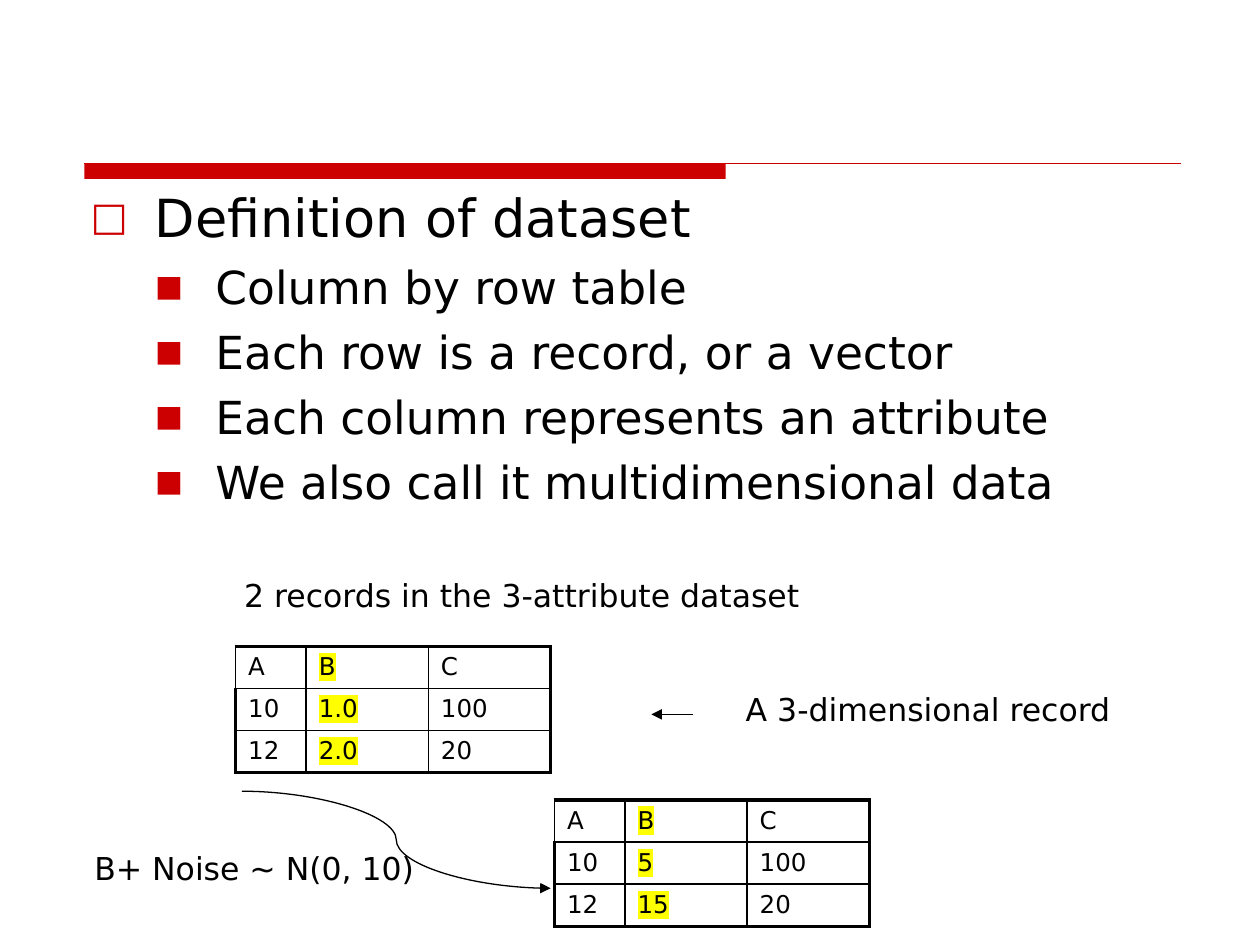
import pptx
import pptx.dml.color
import pptx.enum.shapes
import pptx.enum.text
import pptx.oxml
import pptx.oxml.ns
import pptx.util
from pptx.util import Inches

RED = pptx.dml.color.RGBColor(0xCC, 0x00, 0x00)
BLACK = pptx.dml.color.RGBColor(0x00, 0x00, 0x00)
YELLOW = pptx.dml.color.RGBColor(0xFF, 0xFF, 0x00)
FONT = "DejaVu Sans"
THIN, THICK = 1, 2.25
CONNECTOR = pptx.enum.shapes.MSO_CONNECTOR

# One entry per outline level
LEVELS = [
    {"size": 30, "left": 0.51, "hanging": 0.51, "bullet": "□", "bullet_pct": 75},
    {"size": 26, "left": 0.99, "hanging": 0.48, "bullet": "■", "bullet_pct": 65},
]
OUTLINE = [
    (0, "Definition of dataset"),
    (1, "Column by row table"),
    (1, "Each row is a record, or a vector"),
    (1, "Each column represents an attribute"),
    (1, "We also call it multidimensional data"),
]
RECORDS = [["A", "B", "C"], ["10", "1.0", "100"], ["12", "2.0", "20"]]
NOISY_RECORDS = [["A", "B", "C"], ["10", "5", "100"], ["12", "15", "20"]]
HIGHLIGHTED_COLUMN = 1


def add_xml(parent, tag, **attributes):
    child = pptx.oxml.parse_xml(f"<{tag} {pptx.oxml.ns.nsdecls('a')}/>")
    for name, value in attributes.items():
        child.set(name, str(value))
    parent.append(child)
    return child


def add_color(parent, color):
    add_xml(parent, "a:srgbClr", val=color)


def write_run(paragraph, text, size):
    run = paragraph.add_run()
    run.text = text
    for name, value in {"size": pptx.util.Pt(size), "name": FONT, "bold": False}.items():
        setattr(run.font, name, value)
    run.font.color.rgb = BLACK
    return run


def add_line(slide, kind, start, end, color=BLACK, arrow=True):
    line = slide.shapes.add_connector(kind, *map(Inches, start + end))
    line.line.color.rgb = color
    line.line.width = pptx.util.Pt(0.75)
    if arrow:
        add_xml(line.line._get_or_add_ln(), "a:tailEnd", type="triangle")
    add_xml(line._element.spPr, "a:effectLst")


def add_header_rule(slide, left, top, width, height):
    bar = slide.shapes.add_shape(
        pptx.enum.shapes.MSO_SHAPE.RECTANGLE,
        Inches(left), Inches(top), Inches(5.09), Inches(height))
    bar.shadow.inherit = False
    bar.fill.solid()
    bar.fill.fore_color.rgb = RED
    bar.line.fill.background()
    add_line(slide, CONNECTOR.STRAIGHT, (left, top), (left + width, top), RED, arrow=False)


def fill_outline(body, left, top, width, height):
    box = {"left": left, "top": top, "width": width, "height": height}
    for name, value in box.items():
        setattr(body, name, Inches(value))
    frame = body.text_frame
    frame.auto_size = pptx.enum.text.MSO_AUTO_SIZE.NONE
    for index, (level, text) in enumerate(OUTLINE):
        style = LEVELS[level]
        paragraph = frame.add_paragraph() if index else frame.paragraphs[0]
        paragraph.level = level
        paragraph.space_before = pptx.util.Pt(6)
        write_run(paragraph, text, style["size"])
        # Bullet and hanging indent
        properties = paragraph._p.get_or_add_pPr()
        properties.set("marL", str(Inches(style["left"])))
        properties.set("indent", str(-Inches(style["hanging"])))
        add_color(add_xml(properties, "a:buClr"), RED)
        add_xml(properties, "a:buSzPct", val=style["bullet_pct"] * 1000)
        add_xml(properties, "a:buFont", typeface=FONT)
        add_xml(properties, "a:buChar", char=style["bullet"])


def add_label(slide, text, left, top, width, height=0.4):
    label = slide.shapes.add_textbox(*map(Inches, (left, top, width, height)))
    label.text_frame.word_wrap = False
    label.text_frame.auto_size = pptx.enum.text.MSO_AUTO_SIZE.SHAPE_TO_FIT_TEXT
    write_run(label.text_frame.paragraphs[0], text, 18)


def set_borders(cell, widths):
    properties = cell._tc.get_or_add_tcPr()
    for side, width in widths.items():
        border = add_xml(properties, f"a:ln{side}", w=pptx.util.Pt(width))
        add_color(add_xml(border, "a:solidFill"), BLACK)


def add_dataset(slide, records, left, top, width=2.5, height=1):
    last_row, last_column = len(records) - 1, len(records[0]) - 1
    table = slide.shapes.add_table(
        len(records), len(records[0]), *map(Inches, (left, top, width, height))).table
    table.first_row = table.horz_banding = False
    first_width = 0.56
    for index, column in enumerate(table.columns):
        column.width = Inches((width - first_width) / last_column if index else first_width)
    for r, record in enumerate(records):
        for c, value in enumerate(record):
            cell = table.cell(r, c)
            run = write_run(cell.text_frame.paragraphs[0], value, 14)
            if c == HIGHLIGHTED_COLUMN:
                highlight = add_xml(run.font._element, "a:highlight")
                add_color(highlight, YELLOW)
                run.font._element.find(pptx.oxml.ns.qn("a:solidFill")).addnext(highlight)
            # Heavy outer frame, thin inner grid
            set_borders(cell, {
                "L": THICK if c == 0 and r > 0 else THIN,
                "R": THICK if c == last_column else THIN,
                "T": THICK if r == 0 else THIN,
                "B": THICK if r == last_row else THIN,
            })
            cell.fill.background()


def build_slide(presentation):
    slide = presentation.slides.add_slide(presentation.slide_layouts[1])
    title = slide.shapes.title._element
    title.getparent().remove(title)
    add_header_rule(slide, 0.67, 1.3, 8.7, 0.12)
    fill_outline(slide.placeholders[1], 0.62, 1.42, 8.75, 5.42)

    # Dataset with one record pointed out
    add_dataset(slide, RECORDS, 1.87, 5.13)
    add_line(slide, CONNECTOR.STRAIGHT, (5.5, 5.67), (5.17, 5.67))
    add_label(slide, "A 3-dimensional record", 5.82, 5.43, 3.12)
    add_label(slide, "2 records in the 3-attribute dataset", 1.84, 4.52, 4.66)

    # Same dataset after noise is added to B
    add_dataset(slide, NOISY_RECORDS, 4.4, 6.35)
    add_label(slide, "B+ Noise ~ N(0, 10)", 0.65, 6.69, 2.83)
    add_line(slide, CONNECTOR.CURVE, (1.92, 6.28), (4.37, 7.05))


def main():
    presentation = pptx.Presentation()
    presentation.slide_width = Inches(10)
    presentation.slide_height = Inches(7.5)
    build_slide(presentation)
    presentation.save("out.pptx")


if __name__ == "__main__":
    main()
